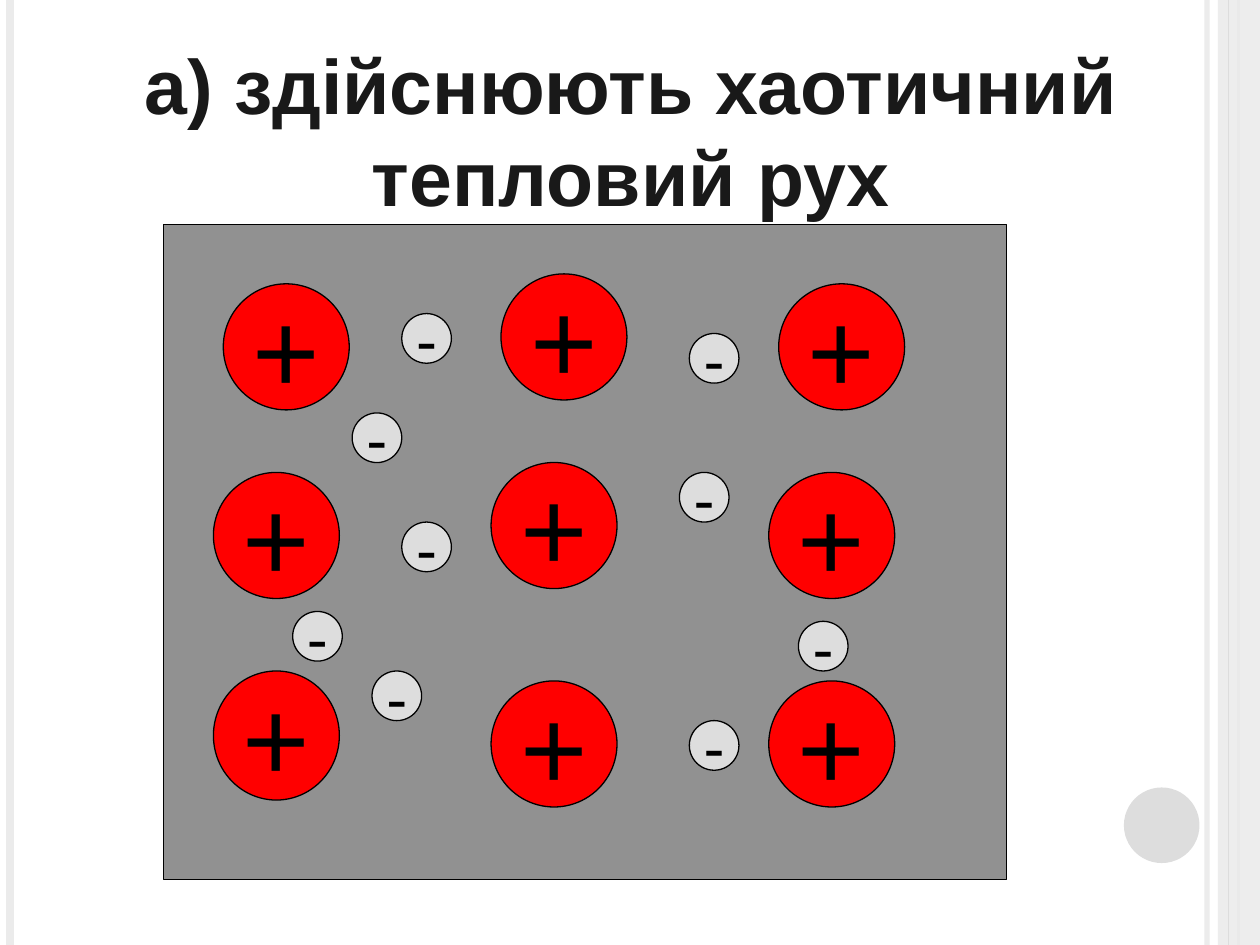
from typing import NamedTuple, Optional

from lxml import etree
from pptx import Presentation
from pptx import util as u
from pptx.dml.color import RGBColor
from pptx.enum import shapes, text
from pptx.oxml.ns import qn

WIDTH, HEIGHT = 10, 7.5
FONT = "Arial"
BLACK, PALE, LIGHT = "000000", "DDDDDD", "EBEBEB"

# The metal fills a grid of 85 columns by 66 rows
COLUMNS, ROWS = 85, 66
METAL_LEFT, METAL_TOP, METAL_WIDTH, METAL_HEIGHT = 1.3, 1.78, 6.69, 5.2
COLUMN, ROW = METAL_WIDTH / COLUMNS, METAL_HEIGHT / ROWS


class Kind(NamedTuple):
    sign: str
    fill: str
    size: float  # diameter in grid cells
    points: int


class Particle(NamedTuple):
    kind: Kind
    column: int
    row: int
    stretch: float = 0  # extra height in grid cells


class Stripe(NamedTuple):
    x: float  # share of the slide's width
    color: str
    points: float
    opacity: Optional[int] = None


ION = Kind("+", "FF0000", 12.7, 66)
ELECTRON = Kind("-", PALE, 5, 36)

IONS = [
    Particle(ION, 6, 6), Particle(ION, 34, 5), Particle(ION, 62, 6),
    Particle(ION, 5, 25), Particle(ION, 33, 24), Particle(ION, 61, 25),
    Particle(ION, 5, 45, 0.3), Particle(ION, 33, 46), Particle(ION, 61, 46),
]
ELECTRONS = [
    Particle(ELECTRON, column, row)
    for column, row in [(13, 39), (24, 30), (52, 25), (19, 19), (21, 45),
                        (24, 9), (64, 40), (53, 50), (53, 11)]
]
OUTER_STRIPES = [Stripe(0.958, LIGHT, 3, 93), Stripe(0.008, LIGHT, 4.5),
                 Stripe(0.983, PALE, 1.5)]
INNER_STRIPE = Stripe(0.975, PALE, 0.75)


def rgb(value: str) -> RGBColor:
    return RGBColor.from_string(value)


def set_opacity(shape, percent: int) -> None:
    color = next(shape._element.spPr.iter(qn("a:srgbClr")))
    etree.SubElement(color, qn("a:alpha"), val=str(percent * 1000))


def add_stripe(page, stripe: Stripe) -> None:
    x = u.Inches(stripe.x * WIDTH)
    line = page.shapes.add_connector(
        shapes.MSO_CONNECTOR.STRAIGHT, x, 0, x, u.Inches(HEIGHT))
    line.line.color.rgb = rgb(stripe.color)
    line.line.width = u.Pt(stripe.points)
    if stripe.opacity is not None:
        set_opacity(line, stripe.opacity)
    etree.SubElement(line._element.spPr, qn("a:effectLst"))


def add_figure(page, preset, left: float, top: float, width: float,
               height: float, fill: str, outline: Optional[str] = None):
    figure = page.shapes.add_shape(
        preset, *map(u.Inches, (left, top, width, height)))
    figure.shadow.inherit = False
    figure.fill.solid()
    figure.fill.fore_color.rgb = rgb(fill)
    if outline:
        figure.line.color.rgb = rgb(outline)
        figure.line.width = u.Pt(0.75)
    else:
        figure.line.fill.background()
    return figure


def write(box, words: str, points: int, color: str, wrap: bool,
          bold: bool = False) -> None:
    frame = box.text_frame
    frame.word_wrap = wrap
    frame.vertical_anchor = text.MSO_ANCHOR.MIDDLE
    para = frame.paragraphs[0]
    para.alignment = text.PP_ALIGN.CENTER
    span = para.add_run()
    span.text = words
    span.font.name = FONT
    span.font.size = u.Pt(points)
    span.font.bold = bold
    span.font.color.rgb = rgb(color)


def add_particle(page, particle: Particle) -> None:
    kind = particle.kind
    ball = add_figure(
        page, shapes.MSO_SHAPE.OVAL,
        METAL_LEFT + particle.column * COLUMN,
        METAL_TOP + particle.row * ROW,
        kind.size * COLUMN, (kind.size + particle.stretch) * ROW,
        kind.fill, BLACK)
    write(ball, kind.sign, kind.points, BLACK, wrap=False)


def main() -> None:
    deck = Presentation()
    deck.slide_width, deck.slide_height = u.Inches(WIDTH), u.Inches(HEIGHT)
    page = deck.slides.add_slide(deck.slide_layouts[6])

    # Side decoration
    for stripe in OUTER_STRIPES:
        add_stripe(page, stripe)
    band = add_figure(page, shapes.MSO_SHAPE.RECTANGLE,
                      WIDTH * 29 / 30, 0, WIDTH / 30, HEIGHT, LIGHT)
    set_opacity(band, 87)
    add_stripe(page, INNER_STRIPE)
    add_figure(page, shapes.MSO_SHAPE.OVAL, 8.92, 6.25, 0.6, 0.6, PALE)

    # Metal and title
    add_figure(page, shapes.MSO_SHAPE.RECTANGLE, METAL_LEFT, METAL_TOP,
               METAL_WIDTH, METAL_HEIGHT, "919191", BLACK)
    title = page.shapes.add_textbox(*map(u.Inches, (0.51, 0.28, 9, 1.5)))
    write(title, "а) здійснюють хаотичний тепловий рух", 44, "191919",
          wrap=True, bold=True)

    # Lattice ions and free electrons
    for particle in IONS + ELECTRONS:
        add_particle(page, particle)

    deck.save("out.pptx")


if __name__ == "__main__":
    main()
